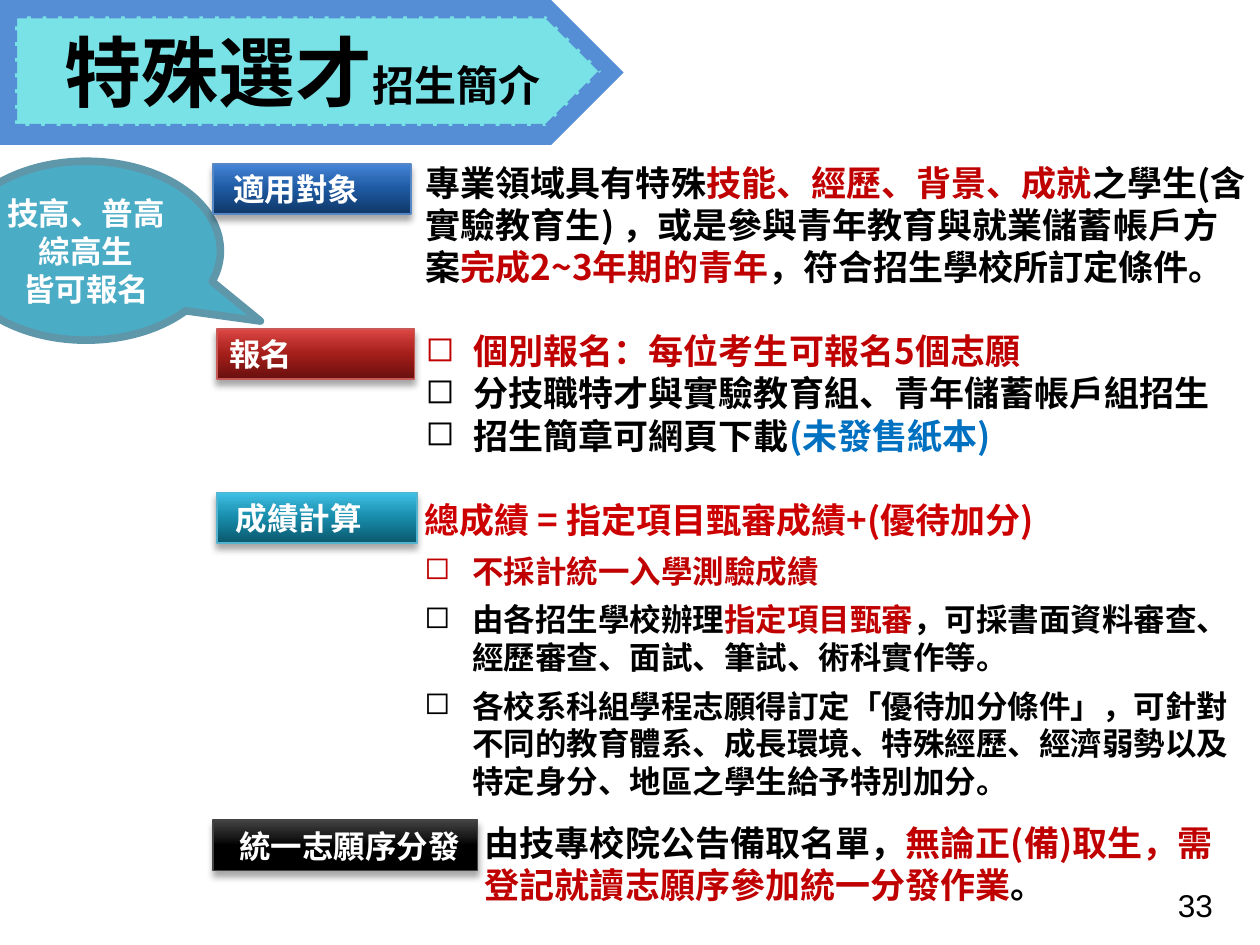
"""Build the special-talent admission overview slide."""
from lxml.etree import SubElement
from pptx import Presentation
from pptx.dml.color import RGBColor
from pptx.enum.dml import MSO_LINE
from pptx.enum.shapes import MSO_SHAPE as Shape
from pptx.enum.text import MSO_ANCHOR as Anchor, PP_ALIGN as Align
from pptx.oxml.ns import qn
from pptx.util import Inches, Pt

CJK = "Noto Sans CJK SC"
BLACK = RGBColor(0, 0, 0)
WHITE = RGBColor(255, 255, 255)
RED = RGBColor(0xC0, 0, 0)
BRIGHT_RED = RGBColor(0xCC, 0, 0)
BLUE = RGBColor(0, 0x70, 0xC0)
BANNER = RGBColor(0x55, 0x8E, 0xD5)
BANNER_INNER = RGBColor(0x79, 0xE2, 0xE7)
CALLOUT = RGBColor(0x4B, 0xAC, 0xC6)
CALLOUT_LINE = RGBColor(0x5F, 0x97, 0xAA)
LINE_HEIGHT = 1.205
GRADIENT_STOPS = (0, 50, 70, 100)

TITLE = [("特殊選才", 44), ("招生簡介", 24)]
CALLOUT_LINES = ["技高、普高", "綜高生", "皆可報名"]

# box, text inset, gradient from bottom to top, border
LABELS = [
    ("成績計算", (1.72, 3.91, 1.59, 0.4), 0.15,
     ("0B586C", "178BAA", "279FC0", "41C1E6"), "54B3CF"),
    ("報名", (1.72, 2.61, 1.57, 0.4), 0.1,
     ("68100E", "A41E1A", "B92E2A", "DF4845"), "C95956"),
    ("適用對象", (1.69, 1.3, 1.57, 0.4), 0.16,
     ("0F3766", "1D59A1", "2D6AB6", "4786DB"), "5887C6"),
    ("統一志願序分發", (1.69, 6.51, 2.1, 0.4), 0.21,
     ("000000", "000000", "1D1D1D", "424242"), "444444"),
]

# size, space before, left indent, bulleted, runs
BODIES = [
    ((3.28, 1.23, 6.72, 5.83), [
        (20, 0, 0, False, [
            ("專業領域具有特殊", BLACK), ("技能、經歷、背景、成就", RED),
            ("之學生(含實驗教育生) ，或是參與青年教育與就業儲蓄帳戶方案", BLACK),
            ("完成2~3年期的青年", RED), ("，符合招生學校所訂定條件。", BLACK)]),
        (20, 24, 0.38, True, [("個別報名：每位考生可報名5個志願", RED)]),
        (20, 0, 0.38, True, [("分技職特才與實驗教育組、青年儲蓄帳戶組招生", BLACK)]),
        (20, 0, 0.38, True, [("招生簡章可網頁下載", BLACK), ("(未發售紙本)", BLUE)]),
    ]),
    ((3.27, 3.91, 6.6, 3.03), [
        (20, 0, 0, False, [("總成績 = 指定項目甄審成績+(優待加分)", BRIGHT_RED)]),
        (18, 6, 0.38, True, [("不採計統一入學測驗成績", RED)]),
        (18, 6, 0.38, True, [
            ("由各招生學校辦理", BLACK), ("指定項目甄審", RED),
            ("，可採書面資料審查、經歷審查、面試、筆試、術科實作等。", BLACK)]),
        (18, 6, 0.38, True, [
            ("各校系科組學程志願得訂定「優待加分條件」，可針對不同的教育體系、成長環境、"
             "特殊經歷、經濟弱勢以及特定身分、地區之學生給予特別加分。", BLACK)]),
        (20, 12, 0.48, False, [
            ("由技專校院公告備取名單，", BLACK),
            ("無論正(備)取生，需登記就讀志願序參加統一分發作業", RED), ("。", BLACK)]),
    ]),
]


def add_run(paragraph, text, size, color, font=CJK, bold=True):
    run = paragraph.add_run()
    run.text = text
    run.font.size, run.font.bold, run.font.name = Pt(size), bold, font
    run.font.color.rgb = color
    SubElement(run.font._element, qn("a:ea")).set("typeface", CJK)


def set_frame(shape, left=0.1, right=0.1, anchor=Anchor.MIDDLE):
    frame = shape.text_frame
    frame.word_wrap = True
    frame.vertical_anchor = anchor
    frame.margin_left, frame.margin_right = Inches(left), Inches(right)
    return frame


def get_paragraph(frame, index):
    return frame.add_paragraph() if index else frame.paragraphs[0]


def add_shape(slide, kind, box, fill=None, line=None, width=0):
    shape = slide.shapes.add_shape(kind, *map(Inches, box))
    shape.shadow.inherit = False
    if fill is not None:
        shape.fill.solid()
        shape.fill.fore_color.rgb = fill
    if line is None:
        shape.line.fill.background()
    else:
        shape.line.color.rgb = line
        shape.line.width = Pt(width)
    return shape


def add_body(slide, box, paragraphs):
    frame = set_frame(slide.shapes.add_textbox(*map(Inches, box)), anchor=Anchor.TOP)
    for index, (size, before, indent, bulleted, runs) in enumerate(paragraphs):
        paragraph = get_paragraph(frame, index)
        paragraph.space_before = Pt(before)
        paragraph.line_spacing = Pt(size * LINE_HEIGHT)
        properties = paragraph._p.get_or_add_pPr()
        properties.set("marL", str(Inches(indent)))
        if bulleted:
            properties.set("indent", str(-Inches(indent)))
            SubElement(properties, qn("a:buChar")).set("char", "◻")
        for text, color in runs:
            add_run(paragraph, text, size, color)


def add_label(slide, text, box, inset, colors, border):
    shape = add_shape(slide, Shape.RECTANGLE, box, None, RGBColor.from_string(border), 1)
    shape.fill.gradient()
    shape.fill.gradient_angle = 90
    stops = shape._element.spPr.find(".//" + qn("a:gsLst"))
    for stop in list(stops):
        stops.remove(stop)
    for position, color in zip(GRADIENT_STOPS, colors):
        stop = SubElement(stops, qn("a:gs"), pos=str(position * 1000))
        SubElement(stop, qn("a:srgbClr"), val=color)
    effects = shape._element.spPr.find(qn("a:effectLst"))
    shadow = SubElement(effects, qn("a:outerShdw"), blurRad=str(Pt(4)),
                        dist=str(Pt(3)), dir="5400000", rotWithShape="0")
    shade = SubElement(shadow, qn("a:srgbClr"), val="000000")
    SubElement(shade, qn("a:alpha"), val="35000")
    paragraph = set_frame(shape, inset, 0).paragraphs[0]
    paragraph.alignment = Align.LEFT
    paragraph.line_spacing = Pt(18 * LINE_HEIGHT)
    add_run(paragraph, text, 18, WHITE)


def add_callout(slide):
    shape = add_shape(slide, Shape.OVAL_CALLOUT, (-0.38, 1.28, 2.13, 1.42),
                      CALLOUT, CALLOUT_LINE, 4.33)
    shape.adjustments[0], shape.adjustments[1] = 0.649, 0.393
    frame = set_frame(shape, 0.05, 0.05)
    for index, text in enumerate(CALLOUT_LINES):
        paragraph = get_paragraph(frame, index)
        paragraph.alignment = Align.CENTER
        paragraph.line_spacing = Pt(18 * LINE_HEIGHT)
        add_run(paragraph, text, 18, WHITE)


def add_banner(slide):
    add_shape(slide, Shape.PENTAGON, (-0.09, 0, 5.04, 1.15), BANNER)
    inner = add_shape(slide, Shape.PENTAGON, (0.12, 0.13, 4.65, 0.87),
                      BANNER_INNER, BANNER, 2.25)
    inner.line.dash_style = MSO_LINE.SQUARE_DOT
    paragraph = set_frame(inner, 0.39, 0).paragraphs[0]
    paragraph.alignment = Align.LEFT
    for text, size in TITLE:
        add_run(paragraph, text, size, BLACK, "Noto Sans Mono")


def main():
    presentation = Presentation()
    presentation.slide_width, presentation.slide_height = Inches(10), Inches(7.5)
    slide = presentation.slides.add_slide(presentation.slide_layouts[6])
    number = slide.shapes.add_textbox(*map(Inches, (9.25, 6.98, 0.63, 0.4)))
    add_run(set_frame(number).paragraphs[0], "33", 18, BLACK, "Arial", False)
    add_body(slide, *BODIES[0])
    add_callout(slide)
    add_banner(slide)
    for label in LABELS[:3]:
        add_label(slide, *label)
    add_body(slide, *BODIES[1])
    add_label(slide, *LABELS[3])
    presentation.save("out.pptx")


if __name__ == "__main__":
    main()
